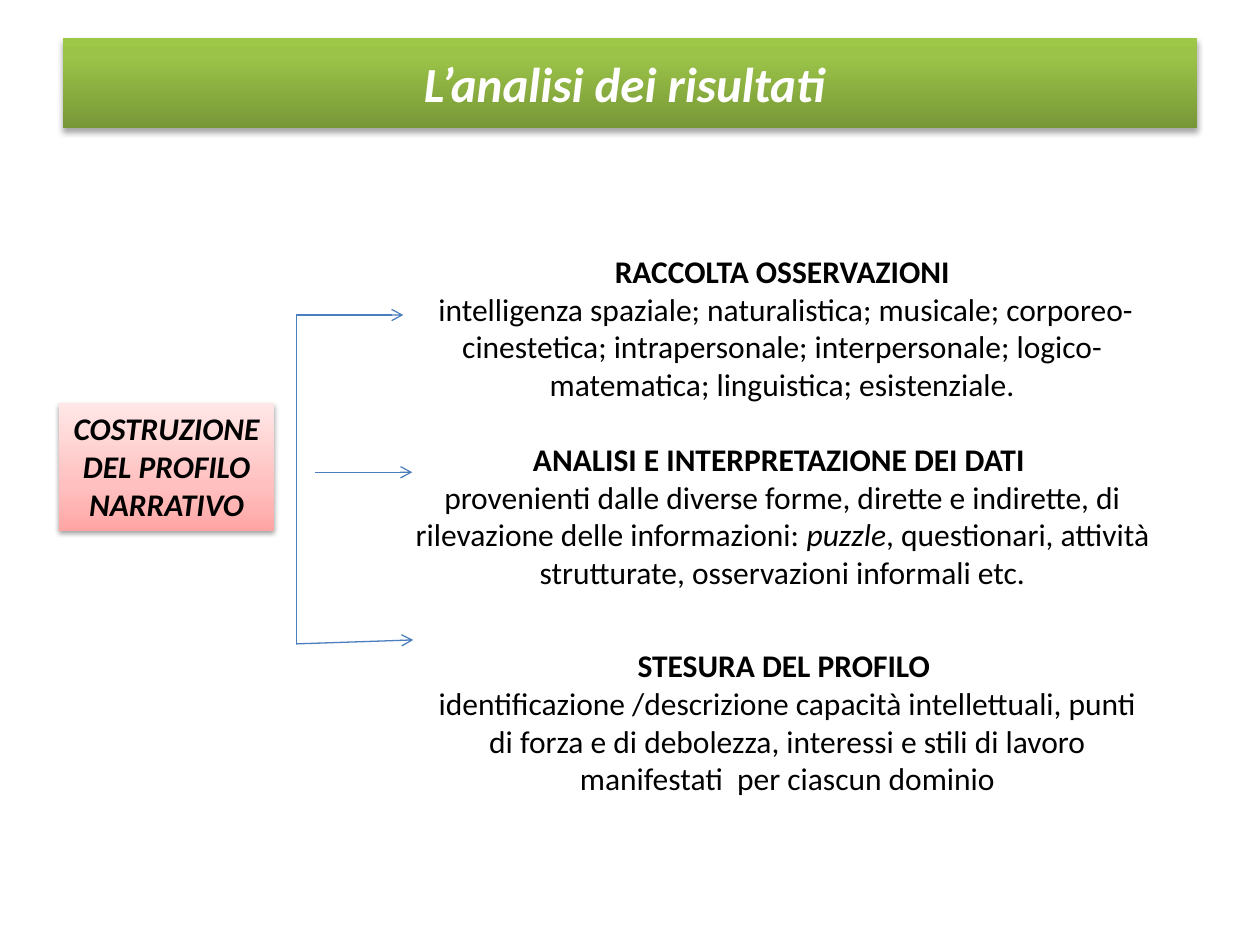
import copy

import pptx
import pptx.dml.color
import pptx.enum.shapes
import pptx.enum.text
import pptx.oxml
import pptx.oxml.ns
import pptx.util
from pptx.util import Cm

RGBColor = pptx.dml.color.RGBColor
BLACK = RGBColor(0x00, 0x00, 0x00)
WHITE = RGBColor(0xFF, 0xFF, 0xFF)
BLUE = RGBColor(0x4B, 0x7E, 0xBC)
GREENS = [(0, RGBColor(0x77, 0x97, 0x37)), (0.8, RGBColor(0x9B, 0xC3, 0x48)),
          (1, RGBColor(0x9D, 0xC7, 0x46))]
PINKS = [(0, RGBColor(0xFF, 0xA6, 0xA5)), (0.35, RGBColor(0xFF, 0xC0, 0xBF)),
         (1, RGBColor(0xFF, 0xE7, 0xE7))]
NS = pptx.oxml.ns.nsdecls("a")
RECT = pptx.enum.shapes.MSO_SHAPE.RECTANGLE
FIT = pptx.enum.text.MSO_AUTO_SIZE


def write(shape, paras, size=18, color=BLACK, fit=FIT.SHAPE_TO_FIT_TEXT):
    """Each paragraph is a list of (text, bold, italic) runs."""
    frame = shape.text_frame
    frame.word_wrap = True
    frame.auto_size = fit
    frame.vertical_anchor = pptx.enum.text.MSO_ANCHOR.TOP
    for i, runs in enumerate(paras):
        para = frame.add_paragraph() if i else frame.paragraphs[0]
        para.alignment = pptx.enum.text.PP_ALIGN.CENTER
        for text, bold, italic in runs:
            run = para.add_run()
            run.text = text
            font = run.font
            font.name, font.size = "Calibri", pptx.util.Pt(size)
            font.bold, font.italic = bold, italic
            font.color.rgb = color


def shade(shape, stops, alpha, dist):
    """Upward gradient with three stops, no outline, soft shadow below."""
    shape.fill.gradient()
    shape.fill.gradient_angle = 90
    group = shape._element.spPr.find(".//" + pptx.oxml.ns.qn("a:gsLst"))
    group.append(copy.deepcopy(group[-1]))
    for stop, (place, color) in zip(shape.fill.gradient_stops, stops):
        stop.position = place
        stop.color.rgb = color
    shape.line.fill.background()
    shape.shadow.inherit = False
    effect = shape._element.spPr.find(pptx.oxml.ns.qn("a:effectLst"))
    effect.append(pptx.oxml.parse_xml(
        f'<a:outerShdw {NS} blurRad="40000" dist="{dist}" dir="5400000" rotWithShape="0">'
        f'<a:srgbClr val="000000"><a:alpha val="{alpha}"/></a:srgbClr></a:outerShdw>'))


deck = pptx.Presentation()
deck.slide_width, deck.slide_height = Cm(25.4), Cm(19.05)
slide = deck.slides.add_slide(deck.slide_layouts[5])
shapes = slide.shapes

# Title bar
title = shapes.title
title.left, title.top, title.width, title.height = Cm(1.27), Cm(0.76), Cm(22.86), Cm(1.83)
shade(title, GREENS, 35000, 23000)
write(title, [[("L’analisi dei risultati ", True, True)]],
      size=28, color=WHITE, fit=FIT.NONE)
title.text_frame.vertical_anchor = pptx.enum.text.MSO_ANCHOR.MIDDLE

# Profile box
box = shapes.add_shape(RECT, Cm(1.19), Cm(8.13), Cm(4.34), Cm(2.57))
shade(box, PINKS, 38000, 20000)
write(box, [[("COSTRUZIONE", True, True)], [("DEL PROFILO NARRATIVO", True, True)]])

# Bracket and arrows: x1, y1, x2, y2, arrowhead
for x1, y1, x2, y2, head in [
    (5.97, 12.98, 5.97, 6.35, False),
    (5.97, 6.35, 8.13, 6.35, True),
    (6.35, 9.52, 8.31, 9.52, True),
    (5.97, 12.98, 8.33, 12.9, True),
]:
    line = shapes.add_connector(pptx.enum.shapes.MSO_CONNECTOR.STRAIGHT,
                                Cm(x1), Cm(y1), Cm(x2), Cm(y2))
    line.line.color.rgb = BLUE
    line.line.width = pptx.util.Pt(0.75)
    if head:
        line.line._get_or_add_ln().append(
            pptx.oxml.parse_xml(f'<a:tailEnd {NS} type="arrow"/>'))
    line._element.spPr.append(pptx.oxml.parse_xml(f"<a:effectLst {NS}/>"))

# Three steps: left, top, width, heading, body runs
steps = [
    (8.33, 4.95, 14.88, "RACCOLTA OSSERVAZIONI",
     [(" intelligenza spaziale; naturalistica; musicale; corporeo-cinestetica; "
       "intrapersonale; interpersonale; logico-matematica; linguistica; "
       "esistenziale.", False, False)]),
    (8.13, 8.74, 15.29, "ANALISI E INTERPRETAZIONE DEI DATI ",
     [("provenienti dalle diverse forme, dirette e indirette, di rilevazione "
       "delle informazioni: ", False, False),
      ("puzzle", False, True),
      (", questionari, attività strutturate, osservazioni informali etc.", False, False)]),
    (8.33, 12.9, 15.09, "STESURA DEL PROFILO ",
     [("identificazione /descrizione capacità intellettuali, punti di forza e di "
       "debolezza, interessi e stili di lavoro manifestati  per ciascun dominio",
       False, False)]),
]
for left, top, width, head, body in steps:
    step = shapes.add_textbox(Cm(left), Cm(top), Cm(width), Cm(3.33))
    if head.startswith("RACCOLTA"):
        step.fill.solid()
        step.fill.fore_color.rgb = WHITE
    write(step, [[(head, True, False)], body])

deck.save("out.pptx")
